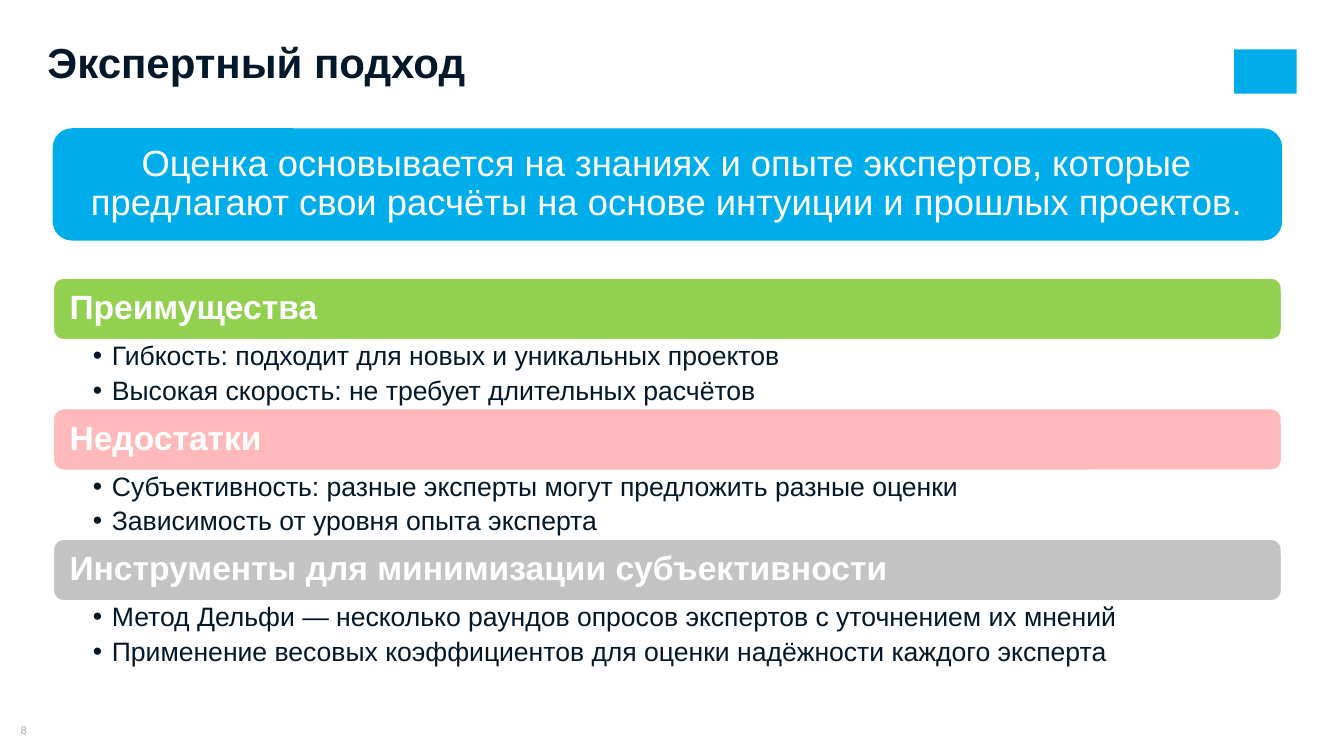
"""Build the slide on the expert approach to estimation."""
import pptx
import pptx.dml.color
import pptx.enum.shapes
import pptx.enum.text
import pptx.oxml.ns
import pptx.util
import lxml.etree

Inches = pptx.util.Inches
Anchor = pptx.enum.text.MSO_ANCHOR
Align = pptx.enum.text.PP_ALIGN
Preset = pptx.enum.shapes.MSO_SHAPE
qn = pptx.oxml.ns.qn

INK, WHITE, BLUE = "03182B", "FFFFFF", "00ADEB"
LEFT, WIDTH = 0.53, 12.18
FIRST_ROW, ROW_STEP, BAR_HEIGHT, LIST_HEIGHT = 2.76, 1.295, 0.61, 0.68


def color(value):
    return pptx.dml.color.RGBColor.from_string(value)


def write(box, lines, size, ink, margins=(0, 0, 0, 0), anchor=Anchor.MIDDLE,
          align=Align.LEFT, bold=False, spacing=0.9):
    frame = box.text_frame
    frame.text = "\n".join(lines)
    frame.word_wrap = True
    frame.vertical_anchor = anchor
    (frame.margin_left, frame.margin_top,
     frame.margin_right, frame.margin_bottom) = map(Inches, margins)
    for para in frame.paragraphs:
        para.alignment = align
        para.line_spacing = spacing
        for span in para.runs:
            span.font.name = "Arial"
            span.font.size = pptx.util.Pt(size)
            span.font.bold = bold
            span.font.color.rgb = color(ink)


deck = pptx.Presentation()
deck.slide_width, deck.slide_height = Inches(13.33), Inches(7.5)
page = deck.slides.add_slide(deck.slide_layouts[6])

sections = [
    ("Преимущества", "92D050", None, [
        "Гибкость: подходит для новых и уникальных проектов",
        "Высокая скорость: не требует длительных расчётов"]),
    ("Недостатки", "FF0409", 28, [
        "Субъективность: разные эксперты могут предложить разные оценки",
        "Зависимость от уровня опыта эксперта"]),
    ("Инструменты для минимизации субъективности", "C3C3C3", None, [
        "Метод Дельфи — несколько раундов опросов экспертов с уточнением их мнений",
        "Применение весовых коэффициентов для оценки надёжности каждого эксперта"]),
]

emblem = page.shapes.add_shape(
    Preset.RECTANGLE, Inches(12.24), Inches(0.49), Inches(0.62), Inches(0.44))
emblem.shadow.inherit = False
emblem.fill.solid()
emblem.fill.fore_color.rgb = color(BLUE)
emblem.line.fill.background()

number = page.shapes.add_textbox(0, Inches(7.18), Inches(0.47), Inches(0.13))
write(number, ["8"], 8, "A6A6A6", align=Align.CENTER, spacing=1.0)

title = page.shapes.add_textbox(Inches(0.47), Inches(0.46), Inches(10.51), Inches(0.41))
write(title, ["Экспертный подход"], 30, INK, anchor=Anchor.TOP, bold=True, spacing=0.8)

bars = [(FIRST_ROW + row * ROW_STEP, BAR_HEIGHT, fill, WHITE, opacity, heading)
        for row, (heading, fill, opacity, points) in enumerate(sections)]
summary = ("Оценка основывается на знаниях и опыте экспертов, которые "
           "предлагают свои расчёты на основе интуиции и прошлых проектов.")
bars.append((1.28, 1.1, BLUE, BLUE, None, summary))

for top, height, fill, edge, opacity, words in bars:
    bar = page.shapes.add_shape(
        Preset.ROUNDED_RECTANGLE, Inches(LEFT), Inches(top), Inches(WIDTH), Inches(height))
    bar.shadow.inherit = False
    bar.fill.solid()
    bar.fill.fore_color.rgb = color(fill)
    bar.line.color.rgb = color(edge)
    bar.line.width = pptx.util.Pt(1)
    if opacity:
        tint = bar.fill._xPr.find(qn("a:solidFill"))[0]
        lxml.etree.SubElement(tint, qn("a:alpha"), val=str(opacity * 1000))
    if words == summary:
        write(bar, [words], 26, WHITE, (0.16, 0.16, 0.16, 0.16), align=Align.CENTER)
    else:
        write(bar, [words], 24, WHITE, (0.13, 0.1, 0.13, 0.1), bold=True)

for row, (heading, fill, opacity, points) in enumerate(sections):
    top = FIRST_ROW + row * ROW_STEP + BAR_HEIGHT
    listing = page.shapes.add_textbox(
        Inches(LEFT), Inches(top), Inches(WIDTH), Inches(LIST_HEIGHT))
    write(listing, points, 19, INK, (0.39, 0.03, 0.19, 0.03), anchor=Anchor.TOP)
    for para in listing.text_frame.paragraphs:
        para.level = 1
        para.space_after = pptx.util.Pt(4.2)
        settings = para._p.get_or_add_pPr()
        settings.set("marL", str(Inches(0.19)))
        settings.set("indent", str(-Inches(0.19)))
        lxml.etree.SubElement(settings, qn("a:buFont"), typeface="Arial")
        lxml.etree.SubElement(settings, qn("a:buChar"), char="•")

deck.save("out.pptx")
